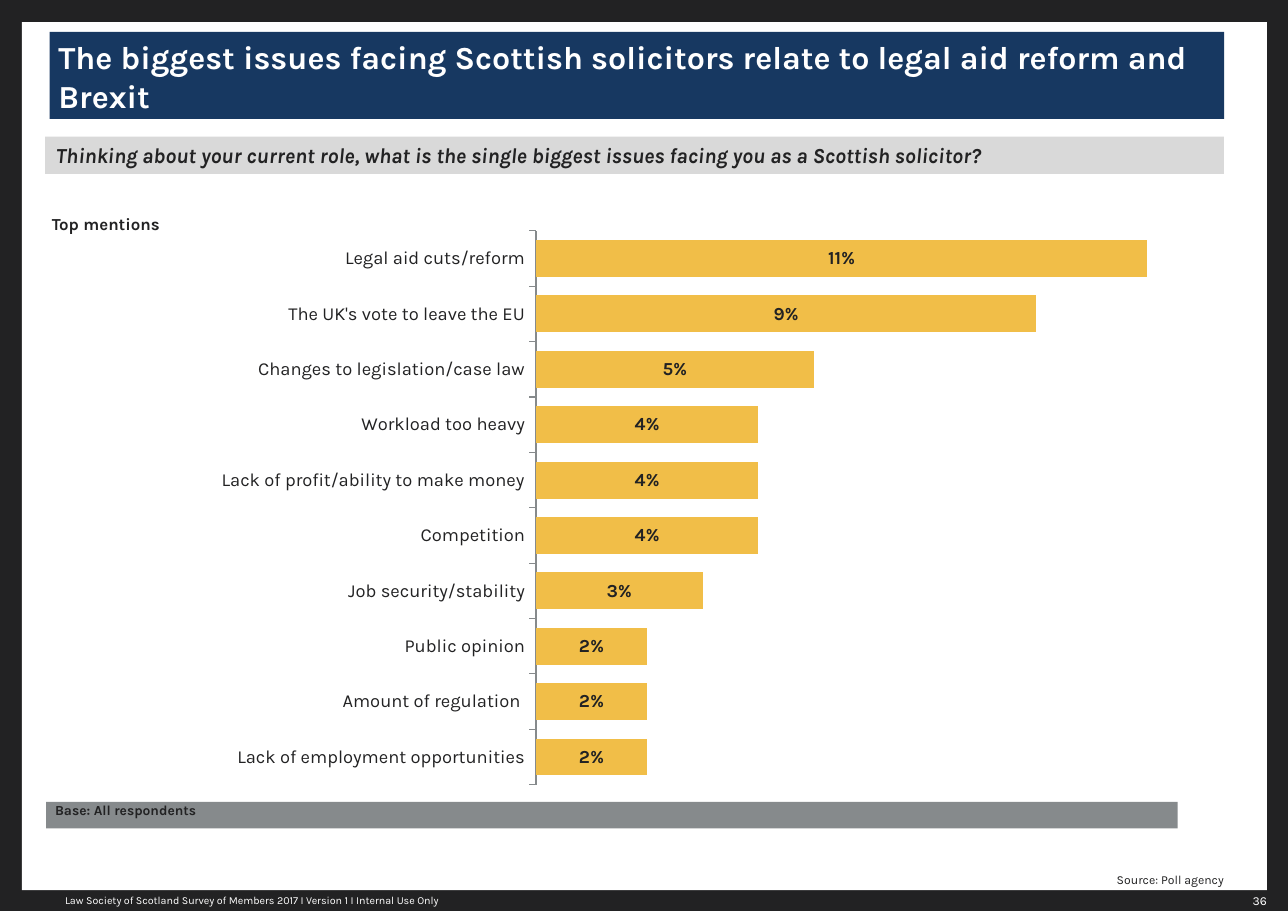
"""Build the survey slide on the biggest issues facing Scottish solicitors."""
from lxml import etree
from pptx import Presentation
from pptx.chart.data import CategoryChartData
from pptx.dml.color import RGBColor
from pptx.enum.chart import XL_CHART_TYPE as ChartType
from pptx.enum.chart import XL_LABEL_POSITION as LabelPosition
from pptx.enum.chart import XL_TICK_MARK as TickMark
from pptx.enum.shapes import MSO_SHAPE as Preset
from pptx.enum.text import MSO_ANCHOR as Anchor
from pptx.enum.text import MSO_AUTO_SIZE as AutoSize
from pptx.enum.text import PP_ALIGN as Align
from pptx.oxml.ns import qn
from pptx.util import Inches, Pt

FONT = "Karla"
INK = RGBColor(0x22, 0x22, 0x23)
WHITE = RGBColor(0xFF, 0xFF, 0xFF)
NAVY = RGBColor(0x17, 0x38, 0x61)
PALE_GREY = RGBColor(0xD9, 0xD9, 0xD9)
MID_GREY = RGBColor(0x86, 0x8A, 0x8C)
GOLD = RGBColor(0xF1, 0xBE, 0x48)

ISSUES = [
    ("Lack of employment opportunities", 0.02),
    ("Amount of regulation ", 0.02),
    ("Public opinion", 0.02),
    ("Job security/stability", 0.03),
    ("Competition", 0.04),
    ("Lack of profit/ability to make money", 0.04),
    ("Workload too heavy", 0.04),
    ("Changes to legislation/case law", 0.05),
    ("The UK's vote to leave the EU", 0.09),
    ("Legal aid cuts/reform", 0.11),
]


def set_font(font, size, color=INK, bold=False, italic=False):
    font.name, font.size = FONT, Pt(size)
    font.bold, font.italic = bold, italic
    font.color.rgb = color


def write(shape, text, size, color=INK, bold=False, italic=False,
          align=Align.LEFT, anchor=Anchor.TOP, inset=(0, 0), spacing=1.0, wrap=True):
    frame = shape.text_frame
    frame.text = text
    frame.word_wrap = wrap
    frame.auto_size = AutoSize.NONE
    frame.vertical_anchor = anchor
    frame.margin_left = frame.margin_right = Inches(inset[0])
    frame.margin_top = frame.margin_bottom = Inches(inset[1])
    paragraph = frame.paragraphs[0]
    paragraph.alignment = align
    paragraph.line_spacing = spacing
    for run in paragraph.runs:
        set_font(run.font, size, color, bold, italic)


def add_band(slide, box, color):
    band = slide.shapes.add_shape(Preset.RECTANGLE, *map(Inches, box))
    band.shadow.inherit = False
    band.fill.solid()
    band.fill.fore_color.rgb = color
    band.line.fill.background()
    return band


def add_label(slide, box, text, size, **style):
    label = slide.shapes.add_textbox(*map(Inches, box))
    write(label, text, size, **style)


def add_title(slide, box, text):
    title = slide.shapes.title
    title.left, title.top, title.width, title.height = map(Inches, box)
    title.fill.solid()
    title.fill.fore_color.rgb = NAVY
    write(title, text, 21, color=WHITE, bold=True, anchor=Anchor.BOTTOM, inset=(0.08, 0.04))


def set_plot_layout(chart, x, y, width, height):
    plot_area = chart.plots[0]._element.getparent()
    for layout in plot_area.findall(qn("c:layout")):
        plot_area.remove(layout)
    layout = etree.Element(qn("c:layout"))
    manual = etree.SubElement(layout, qn("c:manualLayout"))
    settings = [("layoutTarget", "inner"), ("xMode", "edge"), ("yMode", "edge"),
                ("x", x), ("y", y), ("w", width), ("h", height)]
    for name, value in settings:
        etree.SubElement(manual, qn(f"c:{name}")).set("val", str(value))
    plot_area.insert(0, layout)


def add_issue_chart(slide, box):
    data = CategoryChartData(number_format="0%")
    data.categories = [issue for issue, share in ISSUES]
    data.add_series("Series 1", [share for issue, share in ISSUES])
    frame = slide.shapes.add_chart(ChartType.BAR_CLUSTERED, *map(Inches, box), data)
    chart = frame.chart
    chart.has_legend = chart.has_title = False
    set_font(chart.font, 12)

    category_axis = chart.category_axis
    category_axis.major_tick_mark = TickMark.OUTSIDE
    category_axis.minor_tick_mark = TickMark.NONE
    category_axis.has_major_gridlines = False
    category_axis.format.line.color.rgb = MID_GREY
    category_axis.format.line.width = Pt(0.75)
    set_font(category_axis.tick_labels.font, 12)

    value_axis = chart.value_axis
    value_axis.minimum_scale, value_axis.maximum_scale = 0, 0.12
    value_axis.has_major_gridlines = False
    value_axis.visible = False

    plot = chart.plots[0]
    plot.gap_width = 50
    plot.vary_by_categories = False
    series = plot.series[0]
    series.format.fill.solid()
    series.format.fill.fore_color.rgb = GOLD
    labels = series.data_labels
    labels.show_value = True
    labels.position = LabelPosition.CENTER
    labels.number_format = "0%"
    labels.number_format_is_linked = False
    set_font(labels.font, 12, bold=True)
    set_plot_layout(chart, 0.42, 0, 0.58, 0.97)


def main():
    presentation = Presentation()
    presentation.slide_width, presentation.slide_height = Inches(11.69), Inches(8.27)
    slide = presentation.slides.add_slide(presentation.slide_layouts[5])
    slide.background.fill.solid()
    slide.background.fill.fore_color.rgb = INK

    panel = add_band(slide, (0.2, 0.2, 11.3, 7.88), WHITE)
    slide.shapes.title._element.addprevious(panel._element)
    add_title(slide, (0.45, 0.29, 10.66, 0.79),
              "The biggest issues facing Scottish solicitors relate to legal aid reform and Brexit")

    question = add_band(slide, (0.41, 1.24, 10.7, 0.34), PALE_GREY)
    write(question, "Thinking about your current role, what is the single biggest issues "
          "facing you as a Scottish solicitor?", 14, bold=True, italic=True, inset=(0.1, 0.05))

    add_issue_chart(slide, (0.48, 2.09, 10.44, 5.19))
    add_label(slide, (0.47, 1.92, 1.18, 0.2), "Top mentions", 11, bold=True, spacing=1.1)

    base = add_band(slide, (0.42, 7.28, 10.27, 0.24), MID_GREY)
    write(base, "Base: All respondents", 9, bold=True, inset=(0.08, 0))

    add_label(slide, (7.89, 7.85, 3.22, 0.2), "Source: Poll agency", 8,
              align=Align.RIGHT, anchor=Anchor.BOTTOM, spacing=1.1)
    add_label(slide, (0.59, 8.07, 5.35, 0.2),
              "Law Society of Scotland Survey of Members 2017 I Version 1 I Internal Use Only",
              7, color=WHITE, anchor=Anchor.MIDDLE)
    add_label(slide, (10.95, 8.06, 0.63, 0.23), "36", 8, color=WHITE,
              align=Align.RIGHT, inset=(0.08, 0.04), spacing=1.1)
    presentation.save("out.pptx")


if __name__ == "__main__":
    main()
